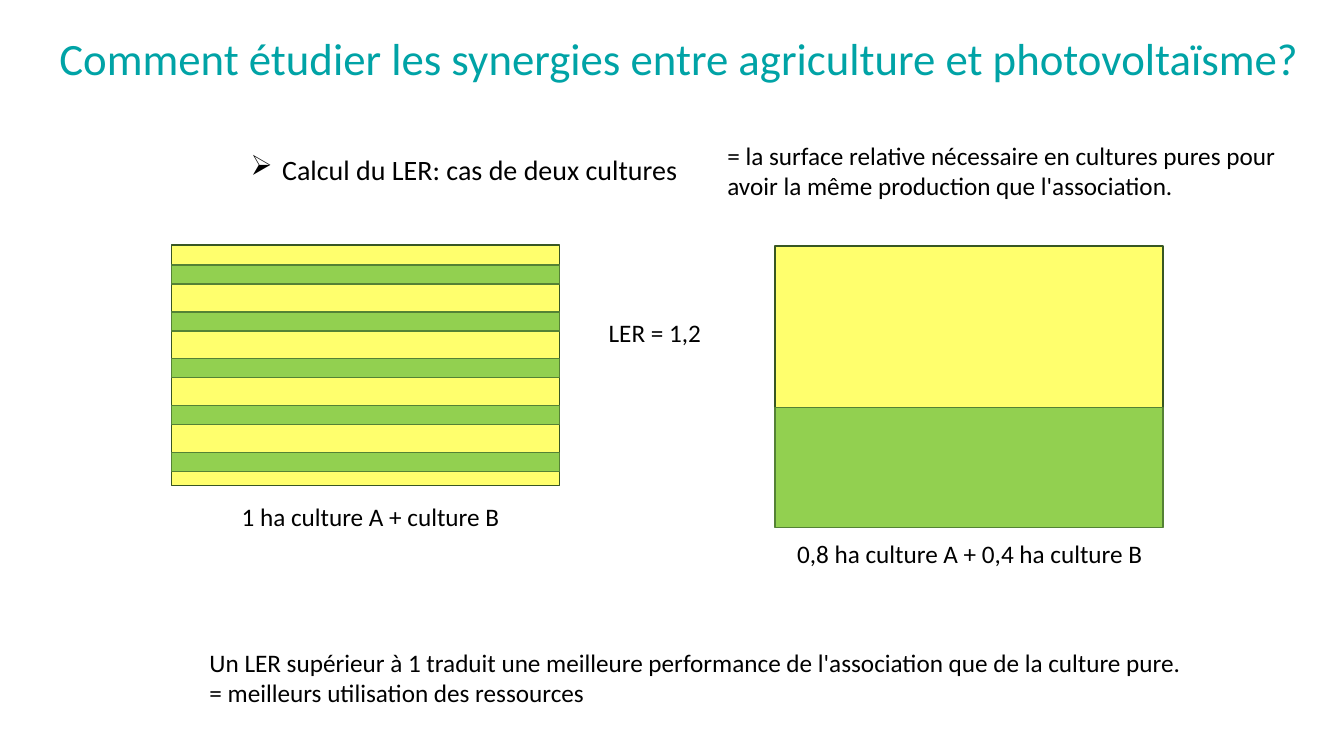
from dataclasses import dataclass

from lxml.etree import SubElement
from pptx import Presentation
from pptx.dml.color import RGBColor as Rgb
from pptx.enum.shapes import MSO_SHAPE as Shape
from pptx.enum.text import MSO_ANCHOR as Anchor
from pptx.enum.text import MSO_AUTO_SIZE as AutoSize
from pptx.enum.text import PP_ALIGN as Align
from pptx.oxml.ns import qn
from pptx.util import Cm, Pt


@dataclass(frozen=True)
class Theme:
    font: str = "Calibri"
    title_size: int = 32
    heading_size: int = 20
    body_size: int = 18
    title: str = "00A3A6"
    text: str = "000000"
    crop_a: tuple = ("FFFF6D", "385723")
    crop_b: tuple = ("92D050", "548235")


class SlideBuilder:
    def __init__(self, page, theme):
        self.page = page
        self.theme = theme

    def add_span(self, para, text, size, color):
        span = para.add_run()
        span.text = text
        span.font.name = self.theme.font
        span.font.size = Pt(size)
        span.font.color.rgb = Rgb.from_string(color)

    def add_title(self, text, left, top, width, height):
        box = self.page.shapes.title
        box.left, box.top, box.width, box.height = map(Cm, (left, top, width, height))
        frame = box.text_frame
        frame.auto_size = AutoSize.NONE
        frame.vertical_anchor = Anchor.TOP
        para = frame.paragraphs[0]
        para.alignment = Align.LEFT
        self.add_span(para, text, self.theme.title_size, self.theme.title)

    def add_text(self, lines, left, top, width, height, size=None, bullet=None):
        box = self.page.shapes.add_textbox(*map(Cm, (left, top, width, height)))
        frame = box.text_frame
        frame.word_wrap = bullet is None
        frame.auto_size = AutoSize.SHAPE_TO_FIT_TEXT
        for index, line in enumerate(lines):
            para = frame.add_paragraph() if index else frame.paragraphs[0]
            if bullet:
                self.add_bullet(para, bullet)
            self.add_span(para, line, size or self.theme.body_size, self.theme.text)

    def add_bullet(self, para, symbol):
        properties = para._p.get_or_add_pPr()
        indent = Cm(0.79)
        properties.set("marL", str(indent))
        properties.set("indent", str(-indent))
        SubElement(properties, qn("a:buChar")).set("char", symbol)

    def add_plot(self, crop, left, top, width, height):
        """Draw a rectangle of land in the fill and line colours of a crop."""
        fill, line = crop
        field = self.page.shapes.add_shape(
            Shape.RECTANGLE, *map(Cm, (left, top, width, height)))
        field.shadow.inherit = False
        field.fill.solid()
        field.fill.fore_color.rgb = Rgb.from_string(fill)
        field.line.color.rgb = Rgb.from_string(line)
        field.line.width = Pt(1)


def main():
    deck = Presentation()
    deck.slide_width, deck.slide_height = Cm(33.87), Cm(19.05)
    theme = Theme()
    slide = SlideBuilder(deck.slides.add_slide(deck.slide_layouts[5]), theme)

    slide.add_title("Comment étudier les synergies entre agriculture et photovoltaïsme?",
                    1.24, 0.64, 32.18, 1.63)
    slide.add_text(["Calcul du LER: cas de deux cultures"],
                   6.07, 3.71, 11.56, 1.12, theme.heading_size, bullet="➢")
    slide.add_text(["= la surface relative nécessaire en cultures pures pour "
                    "avoir la même production que l'association."],
                   18.08, 3.4, 15.34, 1.8)

    field_width = 9.78
    mixed_left, pure_left = 4.32, 19.53
    slide.add_plot(theme.crop_a, mixed_left, 6.17, field_width, 6.07)
    stripe_top, stripe_pitch = 6.68, 1.18
    for row in range(5):
        slide.add_plot(theme.crop_b, mixed_left, stripe_top + row * stripe_pitch,
                       field_width, 0.48)
    slide.add_plot(theme.crop_a, pure_left, 6.2, field_width, 4.09)
    slide.add_plot(theme.crop_b, pure_left, 10.27, field_width, 3.02)

    slide.add_text(["1 ha culture A + culture B"], 5.84, 12.52, 8.28, 1.02)
    slide.add_text(["0,8 ha culture A + 0,4 ha culture B"], 19.84, 13.44, 10.31, 1.02)
    slide.add_text(["LER = 1,2"], 15.09, 7.87, 3.76, 1.02)
    slide.add_text(["Un LER supérieur à 1 traduit une meilleure performance "
                    "de l'association que de la culture pure.",
                    "= meilleurs utilisation des ressources"],
                   5.03, 16.18, 27.66, 1.8)
    deck.save("out.pptx")


if __name__ == "__main__":
    main()
